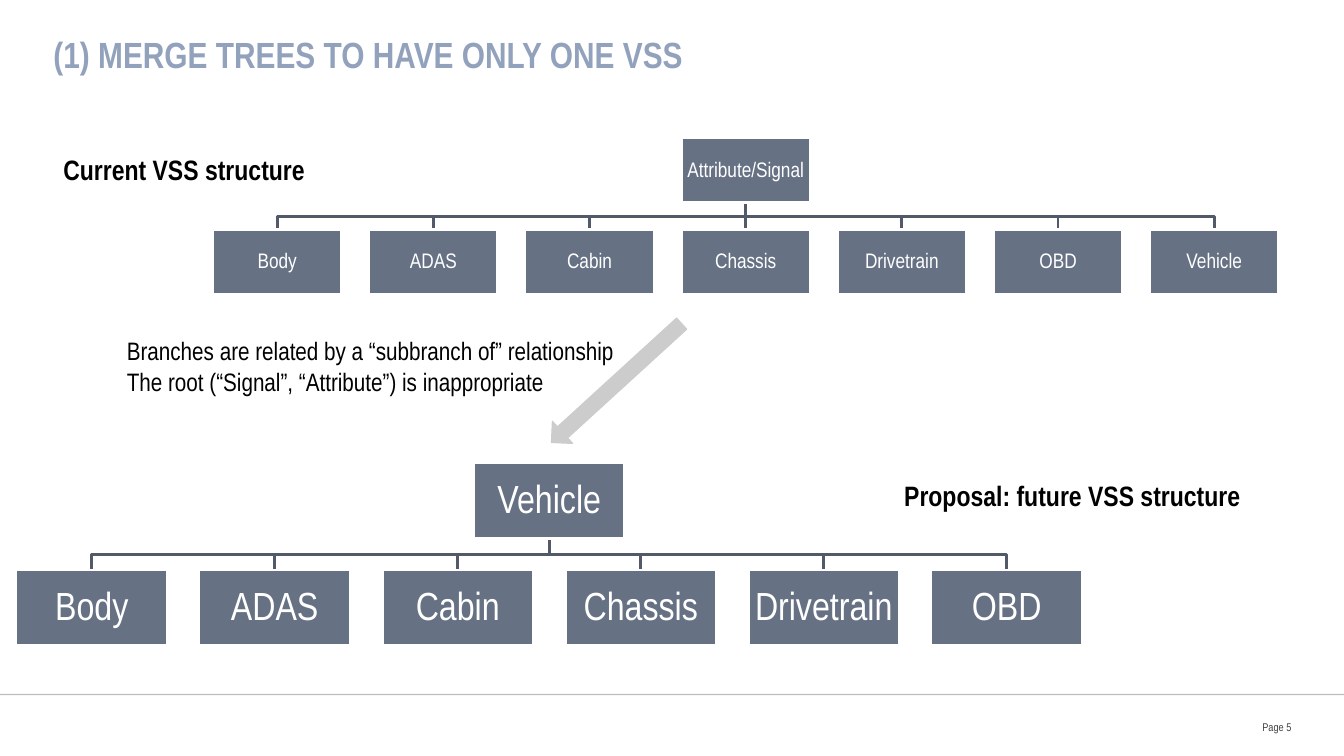
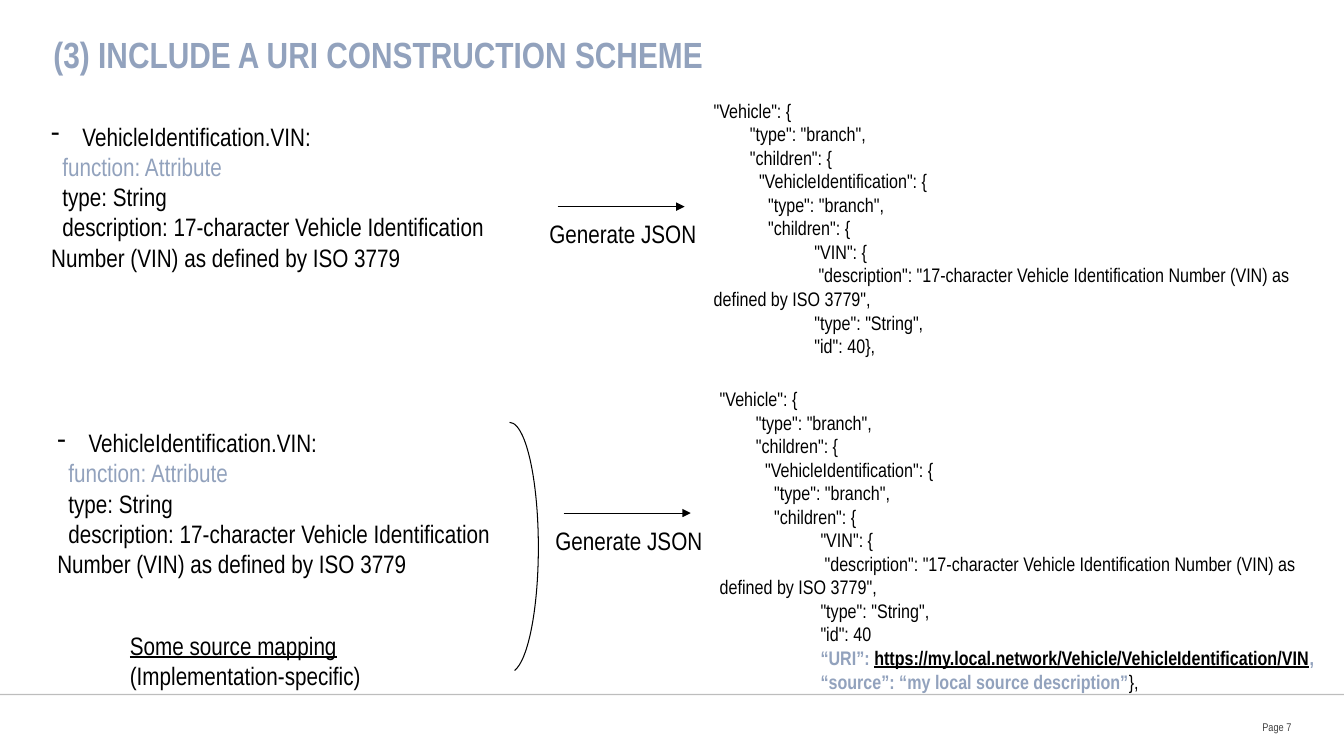
import lxml.etree
import pptx
import pptx.dml.color
import pptx.enum.shapes
import pptx.enum.text
import pptx.oxml.ns
import pptx.util

Inches = pptx.util.Inches
Pt = pptx.util.Pt
Align = pptx.enum.text.PP_ALIGN
Anchor = pptx.enum.text.MSO_ANCHOR
Shape = pptx.enum.shapes.MSO_SHAPE

COLOURS = {
    "black": "000000",
    "white": "FFFFFF",
    "accent": "92A2BD",
    "box": "667184",
    "branch": "525A6A",
    "arrow": "CCCCCC",
    "footer": "404040",
}
ACCENT = {"colour": "accent"}
ACCENT_BOLD = {"colour": "accent", "bold": True}
NO_MARGINS = {"margin_left": 0, "margin_right": 0, "margin_top": 0, "margin_bottom": 0}


def set_all(target, values):
    for name, value in values.items():
        setattr(target, name, value)


def add_element(parent, tag, **attributes):
    return lxml.etree.SubElement(parent, pptx.oxml.ns.qn(tag), attributes)


def colour(name):
    return pptx.dml.color.RGBColor.from_string(COLOURS[name])


class Deck:
    font = "Arial Narrow"

    def __init__(self):
        self.presentation = pptx.Presentation()
        set_all(self.presentation, {"slide_width": Inches(13.33), "slide_height": Inches(7.5)})
        self.slide = None

    def start_slide(self, title, page):
        self.slide = self.presentation.slides.add_slide(self.presentation.slide_layouts[6])
        rule = self.line((0, 6.89), (13.33, 6.89), "black", 1)
        for solid in rule._element.spPr.iter(pptx.oxml.ns.qn("a:srgbClr")):
            add_element(solid, "a:alpha", val="25000")
        self.text((0.53, 0.38, 12.28, 0.77), [title], {"size": 26, **ACCENT_BOLD},
                  NO_MARGINS, {"line_spacing": Pt(27)})
        self.text((11.58, 7.03, 1.23, 0.36), [f"Page {page}"], {"size": 8, "colour": "footer"},
                  {**NO_MARGINS, "vertical_anchor": Anchor.MIDDLE}, {"alignment": Align.RIGHT})

    def text(self, box, lines, font, frame=None, paragraph=None):
        shape = self.slide.shapes.add_textbox(*map(Inches, box))
        self.add_lines(shape.text_frame, lines, font, frame or {}, paragraph or {})

    def add_lines(self, text_frame, lines, font, frame, paragraph_format):
        set_all(text_frame, {"word_wrap": True, **frame})
        for index, line in enumerate(lines):
            paragraph = text_frame.paragraphs[0] if index == 0 else text_frame.add_paragraph()
            set_all(paragraph, paragraph_format)
            line = {"runs": line} if isinstance(line, str) else line
            self.indent(paragraph, line)
            runs = line["runs"]
            for words, changes in [(runs, {})] if isinstance(runs, str) else runs:
                run = paragraph.add_run()
                run.text = words
                style = {"name": self.font, "colour": "black", **font, **changes}
                run.font.color.rgb = colour(style.pop("colour"))
                style["size"] = Pt(style["size"])
                set_all(run.font, style)

    def indent(self, paragraph, line):
        first, left = line.get("first", 0), line.get("left", 0)
        if first or left:
            properties = paragraph._p.get_or_add_pPr()
            properties.set("marL", str(Inches(left)))
            properties.set("indent", str(Inches(first - left)))
            if "bullet" in line:
                add_element(properties, "a:buChar", char=line["bullet"])

    def line(self, start, end, ink, width, arrow=False):
        connector = self.slide.shapes.add_connector(
            pptx.enum.shapes.MSO_CONNECTOR.STRAIGHT, *map(Inches, (*start, *end)))
        self.outline(connector, ink, width)
        properties = connector._element.spPr
        if arrow:
            add_element(properties.find(pptx.oxml.ns.qn("a:ln")), "a:tailEnd", type="triangle")
        add_element(properties, "a:effectLst")
        return connector

    def outline(self, shape, ink, width):
        shape.line.color.rgb = colour(ink)
        shape.line.width = Pt(width)

    def shape(self, kind, box, fill, ink, width):
        shape = self.slide.shapes.add_shape(kind, *map(Inches, box))
        self.finish(shape, fill, ink, width)
        return shape

    def finish(self, shape, fill, ink, width):
        shape.shadow.inherit = False
        if fill:
            shape.fill.solid()
            shape.fill.fore_color.rgb = colour(fill)
        else:
            shape.fill.background()
        self.outline(shape, ink, width)

    def branch(self, start, end):
        if abs(start[0] - end[0]) < 0.01:
            self.line(start, end, "branch", 2)
            return
        middle = (start[1] + end[1]) / 2
        points = [(start[0], middle), (end[0], middle), end]
        builder = self.slide.shapes.build_freeform(*map(Inches, start))
        builder.add_line_segments([tuple(map(Inches, point)) for point in points], close=False)
        self.finish(builder.convert_to_shape(), None, "branch", 2)

    def node(self, label, box, size, margin):
        shape = self.shape(Shape.RECTANGLE, box, "box", "white", 2)
        frame = {name: Inches(margin) for name in NO_MARGINS}
        frame["vertical_anchor"] = Anchor.MIDDLE
        self.add_lines(shape.text_frame, [label], {"size": size, "colour": "white"}, frame,
                       {"alignment": Align.CENTER, "line_spacing": 0.9})

    def tree(self, root, children, left, top, width, size, margin):
        height = width / 2
        pitch = 1.21 * width
        child_top = top + 1.42 * height
        root_left = left + pitch * (len(children) - 1) / 2
        lefts = [left + pitch * index for index in range(len(children))]
        for child_left in reversed(lefts):
            self.branch((root_left + width / 2, top + height), (child_left + width / 2, child_top))
        self.node(root, (root_left, top, width, height), size, margin)
        for label, child_left in zip(children, lefts):
            self.node(label, (child_left, child_top, width, height), size, margin)


SIGNAL = [
    {"runs": "VehicleIdentification.VIN:", "left": 0.31, "bullet": "-"},
    {"runs": [("function: Attribute", ACCENT)], "first": 0.11},
    {"runs": "type: String", "first": 0.11},
    {"runs": "description: 17-character Vehicle Identification Number (VIN) as defined by ISO 3779",
     "first": 0.11},
]
JSON_BODY = [
    {"runs": runs, "first": first} for runs, first in [
        ('"Vehicle": {', 0),
        ('"type": "branch",', 0.36),
        ('"children": {', 0.36),
        ('"VehicleIdentification": {', 0.45),
        ('"type": "branch",', 0.54),
        ('"children": {', 0.54),
        ('"VIN": {', 1),
        ('"description": "17-character Vehicle Identification Number (VIN) as defined by ISO 3779",',
         1.04),
        ('"type": "String",', 1),
    ]
]
JSON_PLAIN_END = [{"runs": '"id": 40},', "first": 1}]
JSON_URI_END = [
    {"runs": '"id": 40', "first": 1},
    {"runs": [
        ("“URI”: ", ACCENT_BOLD),
        ("https://my.local.network/Vehicle/VehicleIdentification/VIN",
         {"bold": True, "underline": True}),
        (",", ACCENT_BOLD),
    ], "first": 1},
    {"runs": [("“source”: “my local source description”", ACCENT_BOLD), ("},", {})], "first": 1},
]


def merge_slide(deck):
    deck.start_slide("(1) MERGE TREES TO HAVE ONLY ONE VSS", 5)
    heading = {"size": 20, "bold": True}
    deck.text((8.87, 4.7, 3.76, 0.44), ["Proposal: future VSS structure"], heading)
    deck.text((0.53, 1.46, 3.14, 0.44), ["Current VSS structure"], heading)
    branches = ["Body", "ADAS", "Cabin", "Chassis", "Drivetrain", "OBD"]
    deck.tree("Attribute/Signal", branches + ["Vehicle"], 2.11, 1.37, 1.28, 15, 0.01)
    deck.tree("Vehicle", branches, 0.16, 4.59, 1.5, 28, 0.02)
    arrow = deck.shape(Shape.RIGHT_ARROW, (5.24, 3.65, 1.75, 0.3), "arrow", "arrow", 0.75)
    arrow.rotation = 137.6
    deck.text((1.16, 3.28, 6.67, 0.71), [
        "Branches are related by a “subbranch of” relationship",
        "The root (“Signal”, “Attribute”) is inappropriate",
    ], {"size": 18})


def generation_step(deck, left, top, json_top, json_end):
    deck.text((left, top, 4.71, 1.62), SIGNAL, {"size": 18})
    json_lines = JSON_BODY + json_end
    json_height = 0.1 + 0.24 * (len(json_lines) + 1)
    deck.text((left + 6.57, json_top, 6.2, json_height), json_lines, {"size": 14})
    deck.line((left + 5.12, top + 0.9), (left + 6.38, top + 0.9), "black", 0.75, arrow=True)
    deck.text((left + 4.94, top + 0.97, 1.7, 0.4), ["Generate JSON"], {"size": 18})


def uri_slide(deck):
    deck.start_slide("(3) INCLUDE A URI CONSTRUCTION SCHEME", 7)
    generation_step(deck, 0.41, 1.15, 0.93, JSON_PLAIN_END)
    generation_step(deck, 0.47, 4.19, 3.79, JSON_URI_END)
    deck.text((1.19, 6.2, 2.66, 0.71), [
        {"runs": [("Some source mapping", {"underline": True})]},
        "(Implementation-specific)",
    ], {"size": 18})
    bracket = deck.shape(Shape.ARC, (4.77, 4.19, 0.57, 2.48), None, "black", 0.75)
    for index, angle in enumerate((162, 52.6)):
        bracket.adjustments[index] = angle


def main():
    deck = Deck()
    merge_slide(deck)
    uri_slide(deck)
    deck.presentation.save("out.pptx")


if __name__ == "__main__":
    main()
